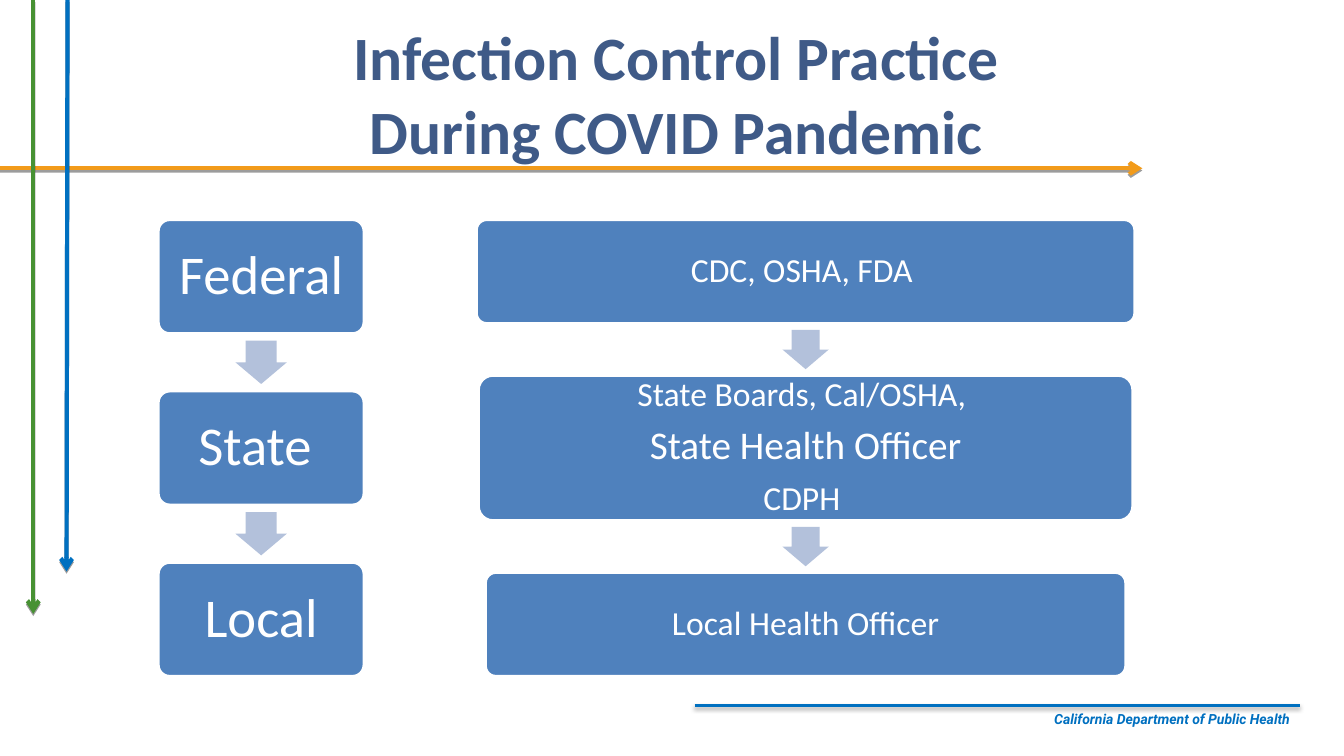
import pptx
import pptx.util
import pptx.dml.color
import pptx.enum.shapes
import pptx.enum.text
import pptx.oxml
import pptx.oxml.ns
from pptx.util import Inches

WHITE, NAVY, BLUE, PALE = "FFFFFF", "3F5A87", "4F81BD", "B3C1DB"
ORANGE, GREEN, BRIGHT = "F29B1A", "479133", "0070C0"
TOP, BOTTOM = 2.18, 6.71
SHAPES = pptx.enum.shapes.MSO_SHAPE
ALIGN = pptx.enum.text.PP_ALIGN


def rgb(value):
    return pptx.dml.color.RGBColor.from_string(value)


def fill_solid(shape, colour):
    shape.shadow.inherit = False
    shape.fill.solid()
    shape.fill.fore_color.rgb = rgb(colour)


def style_runs(para, size, colour, font="Calibri", bold=False, italic=False):
    for span in para.runs:
        span.font.size = pptx.util.Pt(size)
        span.font.name = font
        span.font.color.rgb = rgb(colour)
        span.font.bold = bold
        span.font.italic = italic


def prepare_frame(shape, inset_x=0.1, inset_y=0.05):
    frame = shape.text_frame
    frame.word_wrap = True
    frame.auto_size = pptx.enum.text.MSO_AUTO_SIZE.NONE
    frame.vertical_anchor = pptx.enum.text.MSO_ANCHOR.MIDDLE
    frame.margin_left = frame.margin_right = Inches(inset_x)
    frame.margin_top = frame.margin_bottom = Inches(inset_y)
    return frame


def add_rule(page, start, end, colour, width, blur=0, arrow=False):
    """Straight line with a soft shadow below it."""
    line = page.shapes.add_connector(
        pptx.enum.shapes.MSO_CONNECTOR.STRAIGHT,
        *(Inches(length) for length in start + end))
    line.line.color.rgb = rgb(colour)
    line.line.width = pptx.util.Pt(width)
    namespace = pptx.oxml.ns.nsdecls("a")
    properties = line._element.spPr
    if arrow:
        properties.find(pptx.oxml.ns.qn("a:ln")).append(
            pptx.oxml.parse_xml(f'<a:tailEnd {namespace} type="arrow"/>'))
    properties.append(pptx.oxml.parse_xml(
        f'<a:effectLst {namespace}><a:outerShdw blurRad="{pptx.util.Pt(blur)}" '
        f'dist="{pptx.util.Pt(1.6)}" dir="5400000" rotWithShape="0">'
        '<a:srgbClr val="000000"><a:alpha val="38000"/></a:srgbClr>'
        '</a:outerShdw></a:effectLst>'))


def add_level(group, centre, top, width, height, lines, inset):
    """Rounded box holding (text, size) lines."""
    box = group.shapes.add_shape(
        SHAPES.ROUNDED_RECTANGLE, Inches(centre - width / 2), Inches(top),
        Inches(width), Inches(height))
    box.adjustments[0] = 0.1
    fill_solid(box, BLUE)
    box.line.color.rgb = rgb(WHITE)
    box.line.width = pptx.util.Pt(2)
    frame = prepare_frame(box, inset, inset)
    frame.text = "\n".join(text for text, _ in lines)
    for para, (_, size) in zip(frame.paragraphs, lines):
        para.alignment = ALIGN.CENTER
        para.line_spacing = 0.9
        para.space_after = pptx.util.Pt(0.35 * size)
        style_runs(para, size, WHITE)


def add_down_arrow(group, centre, middle, length, breadth):
    arrow = group.shapes.add_shape(
        SHAPES.RIGHT_ARROW, Inches(centre - length / 2),
        Inches(middle - breadth / 2), Inches(length), Inches(breadth))
    arrow.rotation = 90
    arrow.adjustments[0] = 0.6
    arrow.adjustments[1] = 0.5
    fill_solid(arrow, PALE)
    arrow.line.fill.background()


def add_chain(page, centre, levels, arrow_size, inset):
    """Column of (width, height, lines) boxes with an arrow in each gap."""
    group = page.shapes.add_group_shape()
    used = sum(height for _, height, _ in levels)
    gap = (BOTTOM - TOP - used) / (len(levels) - 1)
    top = TOP
    for index, (width, height, lines) in enumerate(levels):
        if index:
            add_down_arrow(group, centre, top - gap / 2, *arrow_size)
        add_level(group, centre, top, width, height, lines, inset)
        top += height + gap


def add_footer(page):
    box = page.shapes.add_textbox(
        Inches(6.89), Inches(6.93), Inches(6), Inches(0.4))
    para = prepare_frame(box).paragraphs[0]
    para.text = "California Department of Public Health"
    para.alignment = ALIGN.RIGHT
    style_runs(para, 10, BRIGHT, "Roboto", bold=True, italic=True)


def set_title(page):
    title = page.shapes.title
    title.left, title.top = Inches(0.89), Inches(0.3)
    title.width, title.height = Inches(11.78), Inches(1.25)
    para = prepare_frame(title).paragraphs[0]
    para.text = "Infection Control Practice \vDuring COVID Pandemic "
    para.alignment = ALIGN.CENTER
    style_runs(para, 44, NAVY, bold=True)


def main():
    deck = pptx.Presentation()
    deck.slide_width, deck.slide_height = Inches(13.33), Inches(7.5)
    page = deck.slides.add_slide(deck.slide_layouts[5])

    add_footer(page)
    add_rule(page, (6.89, 7), (12.89, 7), BRIGHT, 2, blur=3.1)
    add_rule(page, (0, 1.67), (11.33, 1.67), ORANGE, 3, arrow=True)
    add_rule(page, (0.33, 0), (0.33, 6.09), GREEN, 3, arrow=True)
    add_rule(page, (0.67, 0), (0.66, 5.67), BRIGHT, 3, arrow=True)
    set_title(page)

    governments = [(2.04, 1.13, [(name, 39)])
                   for name in ("Federal ", "State ", "Local")]
    agencies = [
        (6.53, 1.03, [("CDC, OSHA, FDA ", 24)]),
        (6.49, 1.44, [("State Boards, Cal/OSHA, ", 24),
                      ("State Health Officer", 28), ("CDPH ", 24)]),
        (6.35, 1.03, [("Local Health Officer", 24)]),
    ]
    add_chain(page, 2.59, governments, (0.43, 0.51), 0.15)
    add_chain(page, 7.99, agencies, (0.39, 0.46), 0.1)
    deck.save("out.pptx")


if __name__ == "__main__":
    main()
